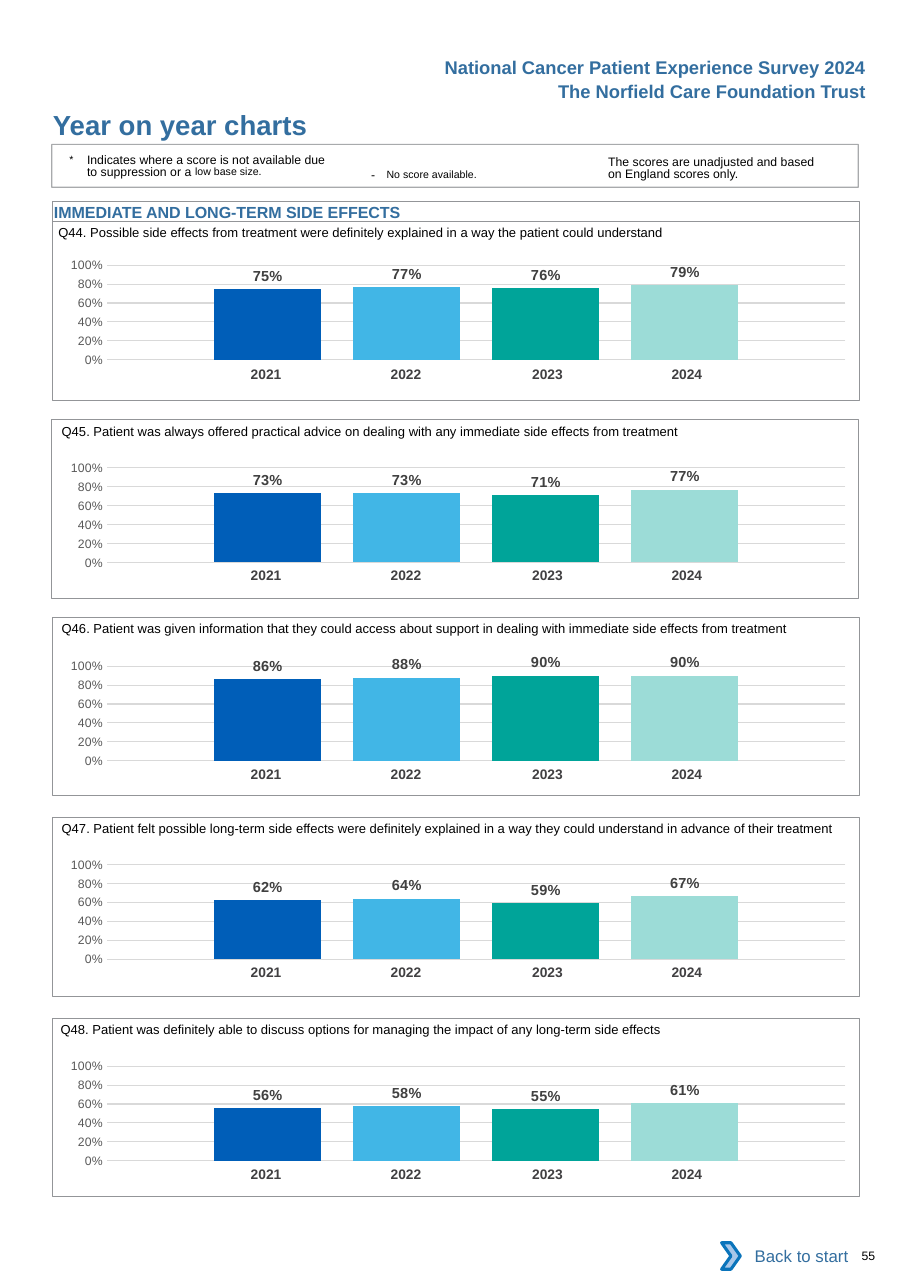
import dataclasses
import typing

import lxml.etree
import pptx
import pptx.chart.data
import pptx.dml.color
import pptx.enum.chart
import pptx.enum.shapes
import pptx.enum.text
import pptx.oxml.ns
import pptx.util

PX = 9144
HUES = {
    "title": "336E9F", "text": "000000", "year": "414042", "label": "404040",
    "tick": "595959", "grid": "D9D9D9", "frame": "939598", "white": "FFFFFF",
    "arrow": "A8C7E9", "edge": "0A74BB",
}
BARS = {"Series 1": "005EB8", "Series 2": "41B6E6", "Series 3": "00A499", "Series 4": "9CDCD7"}
YEARS = ("2021", "2022", "2023", "2024")
WIDTHS = (127, 127, 134, 127)
MARGINS = (0, 0, 4, 12)
PLOT = {"x": 0.08, "y": 0.145, "w": 0.915, "h": 0.666}
PLAIN = "{2D5ABB26-0587-4C30-8999-92F81FD0307C}"
ALIGN = pptx.enum.text.PP_ALIGN
ANCHOR = pptx.enum.text.MSO_ANCHOR
SHAPE = pptx.enum.shapes.MSO_SHAPE


@dataclasses.dataclass(frozen=True)
class Bit:
    text: str
    size: float
    base: int = 0
    space: float = 0


@dataclasses.dataclass(frozen=True)
class Panel:
    left: int
    top: int
    chart: int
    years: int
    indent: int
    query: str
    scores: tuple[float, ...]


PANELS = (
    Panel(48, 201, 222, 328, 53, "Q44. Possible side effects from treatment were definitely explained in a way the patient could understand",
          (0.75, 0.77, 0.76, 0.79)),
    Panel(47, 381, 406, 511, 56, "Q45. Patient was always offered practical advice on dealing with any immediate side effects from treatment",
          (0.73, 0.73, 0.71, 0.77)),
    Panel(48, 560, 586, 691, 56, "Q46. Patient was given information that they could access about support in dealing with immediate side effects from treatment",
          (0.86, 0.88, 0.9, 0.9)),
    Panel(48, 742, 766, 871, 56, "Q47. Patient felt possible long-term side effects were definitely explained in a way they could understand in advance of their treatment",
          (0.62, 0.64, 0.59, 0.67)),
    Panel(48, 924, 949, 1054, 55, "Q48. Patient was definitely able to discuss options for managing the impact of any long-term side effects",
          (0.56, 0.58, 0.55, 0.61)),
)


def tint(name: str) -> pptx.dml.color.RGBColor:
    return pptx.dml.color.RGBColor.from_string(HUES.get(name, name))


def place(*sides: int) -> list[pptx.util.Emu]:
    return [pptx.util.Emu(side * PX) for side in sides]


def style(font: typing.Any, size: float, hue: str, bold: bool = False) -> None:
    font.name = "Arial"
    font.size = pptx.util.Pt(size)
    font.bold = bold
    font.color.rgb = tint(hue)


def write(frame: typing.Any, *bits: str | Bit, size: float = 8, hue: str = "text", bold: bool = False,
          align: typing.Any = ALIGN.LEFT, anchor: typing.Any = ANCHOR.TOP, wrap: bool = True,
          inset: tuple[int, ...] | None = (0, 0, 0, 0), pitch: float = 0, hang: int = 0) -> None:
    frame.word_wrap = wrap
    frame.vertical_anchor = anchor
    if inset is not None:
        (frame.margin_left, frame.margin_top,
         frame.margin_right, frame.margin_bottom) = place(*inset)
    para = frame.paragraphs[0]
    para.alignment = align
    if pitch:
        para.line_spacing = pptx.util.Pt(pitch)
    if hang:
        props = para._p.get_or_add_pPr()
        props.set("marL", str(hang * PX))
        props.set("indent", str(-hang * PX))
    for bit in bits:
        part = bit if isinstance(bit, Bit) else Bit(bit, size)
        run = para.add_run()
        run.text = part.text
        style(run.font, part.size, hue, bold)
        props = run._r.get_or_add_rPr()
        if part.base:
            props.set("baseline", str(part.base * 1000))
        if part.space:
            props.set("spc", str(int(part.space * 100)))


def label(slide: typing.Any, box: tuple[int, ...], *bits: str | Bit, **form: typing.Any) -> None:
    write(slide.shapes.add_textbox(*place(*box)).text_frame, *bits, **form)


def draw(slide: typing.Any, kind: typing.Any, box: tuple[int, ...], fill: str = "",
         line: str = "", width: float = 0.5, alpha: int = 0) -> typing.Any:
    shape = slide.shapes.add_shape(kind, *place(*box))
    shape.shadow.inherit = False
    if fill:
        shape.fill.solid()
        shape.fill.fore_color.rgb = tint(fill)
    else:
        shape.fill.background()
    if line:
        shape.line.color.rgb = tint(line)
        shape.line.width = pptx.util.Pt(width)
    else:
        shape.line.fill.background()
    if alpha:
        shade = shape.line._ln.find(".//" + pptx.oxml.ns.qn("a:srgbClr"))
        lxml.etree.SubElement(shade, pptx.oxml.ns.qn("a:alpha"), val=str(alpha * 1000))
    return shape


def list_years(slide: typing.Any, top: int) -> None:
    table = slide.shapes.add_table(1, len(YEARS), *place(173, top, sum(WIDTHS), 27)).table
    table._tbl.tblPr.find(pptx.oxml.ns.qn("a:tableStyleId")).text = PLAIN
    table.first_row = False
    table.horz_banding = False
    for spot, (year, width, margin) in enumerate(zip(YEARS, WIDTHS, MARGINS)):
        table.columns[spot].width = width * PX
        cell = table.cell(0, spot)
        cell.fill.background()
        (cell.margin_left, cell.margin_top,
         cell.margin_right, cell.margin_bottom) = place(10, 5, margin, 5)
        write(cell.text_frame, year, size=9, hue="year", bold=True, align=ALIGN.CENTER, inset=None)


def fix_plot(chart: typing.Any) -> None:
    area = chart._chartSpace.chart.plotArea
    for old in area.findall(pptx.oxml.ns.qn("c:layout")):
        area.remove(old)
    layout = lxml.etree.Element(pptx.oxml.ns.qn("c:layout"))
    area.insert(0, layout)
    manual = lxml.etree.SubElement(layout, pptx.oxml.ns.qn("c:manualLayout"))
    rules = {"layoutTarget": "inner", "xMode": "edge", "yMode": "edge", **PLOT}
    for name, value in rules.items():
        lxml.etree.SubElement(manual, pptx.oxml.ns.qn("c:" + name), val=str(value))


def plot(slide: typing.Any, top: int, scores: tuple[float, ...]) -> None:
    data = pptx.chart.data.CategoryChartData(number_format="0%")
    data.categories = ["1"]
    for name, score in zip(BARS, scores):
        data.add_series(name, [score])
    kind = pptx.enum.chart.XL_CHART_TYPE.COLUMN_CLUSTERED
    chart = slide.shapes.add_chart(kind, *place(39, top, 732, 129), data).chart
    chart.has_title = False
    chart.has_legend = False
    chart.font.name = "Calibri"
    chart.font.size = pptx.util.Pt(10)
    chart.font.color.rgb = tint("text")
    chart.category_axis.visible = False
    axis = chart.value_axis
    axis.minimum_scale, axis.maximum_scale, axis.major_unit = 0, 1, 0.2
    axis.major_tick_mark = pptx.enum.chart.XL_TICK_MARK.NONE
    axis.format.line.fill.background()
    axis.major_gridlines.format.line.color.rgb = tint("grid")
    axis.major_gridlines.format.line.width = pptx.util.Pt(0.75)
    axis.tick_labels.number_format = "0%"
    axis.tick_labels.number_format_is_linked = False
    style(axis.tick_labels.font, 8, "tick")
    group = chart.plots[0]
    group.gap_width, group.overlap, group.vary_by_categories = 200, -30, False
    for row, hue in zip(group.series, BARS.values()):
        row.format.fill.solid()
        row.format.fill.fore_color.rgb = tint(hue)
        tags = row.data_labels
        tags.show_value = True
        tags.position = pptx.enum.chart.XL_LABEL_POSITION.OUTSIDE_END
        tags.number_format = "0%"
        tags.number_format_is_linked = False
        style(tags.font, 9.5, "label", True)
    fix_plot(chart)


def add_panel(slide: typing.Any, panel: Panel) -> None:
    list_years(slide, panel.years)
    plot(slide, panel.chart, panel.scores)
    label(slide, (panel.indent, panel.top - 6, 730, 24), panel.query, size=8.5, inset=(0, 9, 0, 0))
    draw(slide, SHAPE.RECTANGLE, (panel.left, panel.top, 732, 162), line="frame")


def add_notes(slide: typing.Any) -> None:
    label(slide, (552, 139, 196, 27), "The scores are unadjusted and based on England scores only.",
          inset=(0, 3, 0, 0), pitch=8.1)
    label(slide, (327, 141, 183, 24), Bit("- ", 8, space=2.6), Bit("No score available.", 12, 3),
          inset=(10, 5, 10, 5))
    label(slide, (63, 138, 238, 27), Bit("*\t", 12, 3),
          "Indicates where a score is not available due to suppression or a ",
          Bit("low base size.", 12, 7), inset=(0, 3, 0, 0), pitch=8.1, hang=16)
    draw(slide, SHAPE.RECTANGLE, (47, 131, 732, 39), line="frame", width=0.75, alpha=80)


def main() -> None:
    deck = pptx.Presentation()
    deck.slide_width, deck.slide_height = place(826, 1169)
    slide = deck.slides.add_slide(deck.slide_layouts[5])
    title = slide.shapes.title
    title.left, title.top, title.width, title.height = place(47, 98, 450, 30)
    write(title.text_frame, "Year on year charts", size=18, hue="title", bold=True, inset=(1, 0, 0, 0))
    heads = ("National Cancer Patient Experience Survey 2024", "The Norfield Care Foundation Trust")
    for top, head in zip((46, 68), heads):
        label(slide, (392, top, 404, 30), head, size=12, hue="title", bold=True,
              align=ALIGN.RIGHT, wrap=False, inset=(10, 5, 10, 5))
    add_notes(slide)
    band = draw(slide, SHAPE.RECTANGLE, (48, 183, 732, 18), line="frame")
    write(band.text_frame, "IMMEDIATE AND LONG-TERM SIDE EFFECTS", size=10.5, hue="title",
          bold=True, inset=(1, 1, 0, 0))
    for panel in PANELS:
        add_panel(slide, panel)
    back = draw(slide, SHAPE.RECTANGLE, (662, 1119, 118, 42), fill="white")
    write(back.text_frame, "Back to start", size=11, hue="title", align=ALIGN.RIGHT,
          anchor=ANCHOR.MIDDLE, inset=(10, 5, 10, 5))
    draw(slide, SHAPE.CHEVRON, (655, 1128, 17, 24), fill="arrow", line="edge", width=2)
    label(slide, (782, 1133, 41, 13), "55")
    deck.save("out.pptx")


if __name__ == "__main__":
    main()
